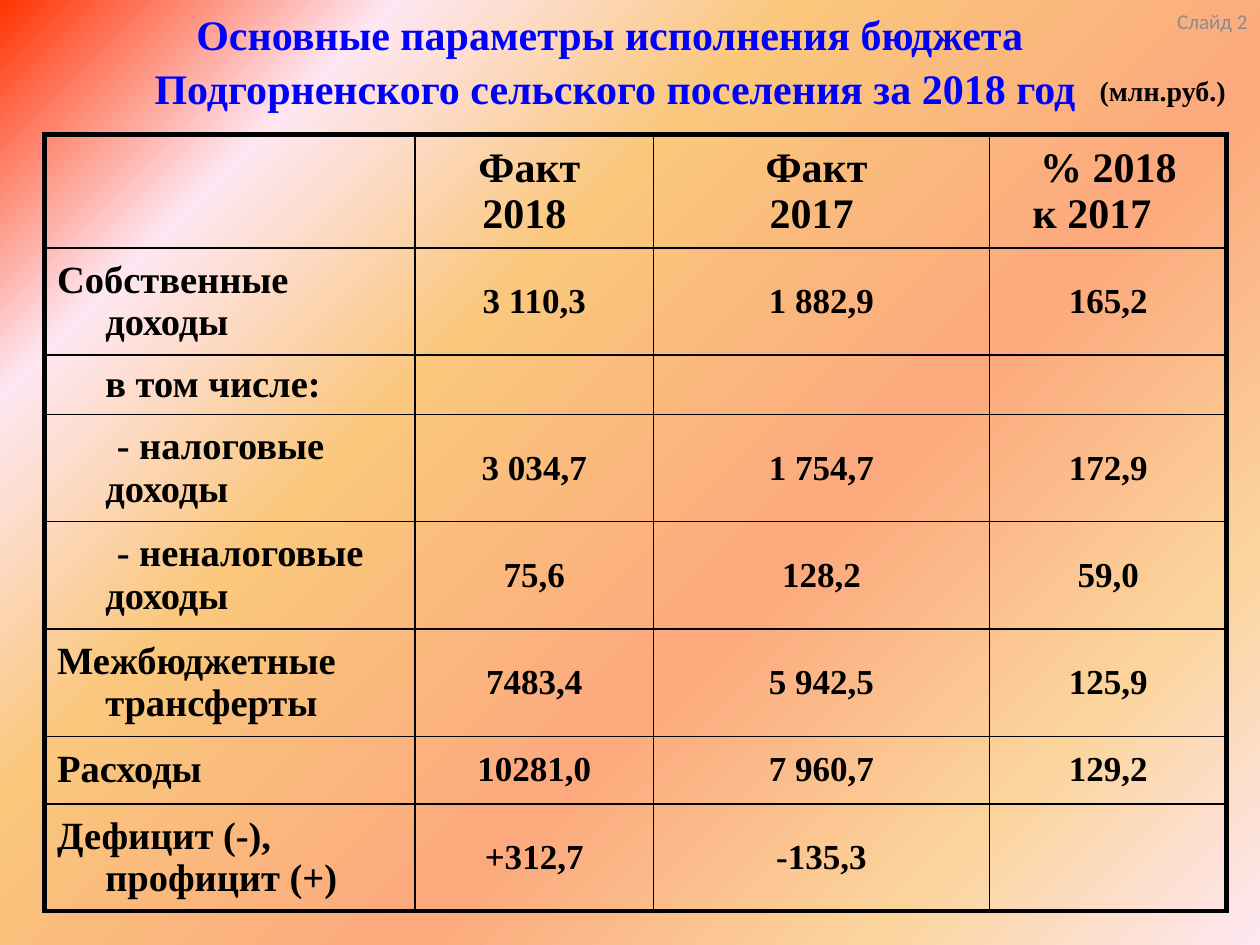
"""Build the slide with the budget execution table."""
from lxml import etree
from pptx import Presentation
from pptx.dml.color import RGBColor
from pptx.enum.text import MSO_ANCHOR, PP_ALIGN
from pptx.oxml.ns import qn
from pptx.util import Cm, Pt

LEFT, CENTER, RIGHT = PP_ALIGN.LEFT, PP_ALIGN.CENTER, PP_ALIGN.RIGHT
MIDDLE = MSO_ANCHOR.MIDDLE
BLUE = RGBColor(0x00, 0x00, 0xFF)
BLACK = RGBColor(0x00, 0x00, 0x00)
GRAY = RGBColor(0x8C, 0x8C, 0x8C)
SERIF = "Times New Roman"
STOPS = [
    (0, RGBColor(0xFF, 0x33, 0x00)),
    (18, RGBColor(0xFE, 0xE7, 0xF2)),
    (36, RGBColor(0xFA, 0xC7, 0x7D)),
    (61, RGBColor(0xFB, 0xA9, 0x7D)),
    (82, RGBColor(0xFB, 0xD4, 0x9C)),
    (100, RGBColor(0xFE, 0xE7, 0xF2)),
]


def style(p, text, size, align, color=BLACK, name=SERIF, bold=True):
    p.text = text
    p.alignment = align
    p.font.size = Pt(size)
    p.font.name = name
    p.font.bold = bold
    p.font.color.rgb = color


def border(cell, side, width):
    ln = etree.SubElement(cell._tc.get_or_add_tcPr(), qn(f"a:ln{side}"), w=str(Pt(width)))
    fill = etree.SubElement(ln, qn("a:solidFill"))
    etree.SubElement(fill, qn("a:srgbClr"), val=str(BLACK))


prs = Presentation()
prs.slide_width, prs.slide_height = Cm(25.4), Cm(19.05)
s = prs.slides.add_slide(prs.slide_layouts[6])

bg = s.background.fill
bg.gradient()
bg.gradient_angle = 315
stop_list = s.element.find(f".//{qn('a:gsLst')}")
stop_list.clear()
for pos, color in STOPS:
    gs = etree.SubElement(stop_list, qn("a:gs"), pos=str(pos * 1000))
    etree.SubElement(gs, qn("a:srgbClr"), val=str(color))

title = "Основные параметры исполнения бюджета \vПодгорненского сельского поселения за 2018 год"
boxes = [
    ((0, 0, 24.8, 2.4), 0.13, 1.07, (title, 24, CENTER, BLUE)),
    ((23.3, 0, 2.1, 1.32), 0.6, 1, ("Слайд 2", 12, RIGHT, GRAY, "Calibri", False)),
    ((21.89, 1.32, 3.1, 1), 0.13, 1, ("(млн.руб.)", 16, CENTER)),
]
for place, bottom, spacing, text in boxes:
    tf = s.shapes.add_textbox(*map(Cm, place)).text_frame
    tf.word_wrap = True
    tf.vertical_anchor = MIDDLE
    tf.margin_bottom = Cm(bottom)
    p = tf.paragraphs[0]
    p.line_spacing = spacing
    style(p, *text)

headers = [
    ("", 0),
    ("Факт\n2018", 0.2),
    ("Факт\n2017", 0.2),
    ("% 2018\nк 2017", 0.66),
]
HANG, FLUSH, DASH = -0.97, 0, 0.23
rows = [
    (2.16, HANG, "Собственные доходы", "3 110,3", "1 882,9", "165,2"),
    (1.2, FLUSH, "в том числе:", "", "", ""),
    (2.16, DASH, "- налоговые доходы", "3 034,7", "1 754,7", "172,9"),
    (2.16, DASH, "- неналоговые доходы", "75,6", "128,2", "59,0"),
    (2.16, HANG, "Межбюджетные трансферты", "7483,4", "5 942,5", "125,9"),
    (1.37, HANG, "Расходы", "10281,0", "7 960,7", "129,2"),
    (2.16, HANG, "Дефицит (-), профицит (+)", "+312,7", "-135,3", ""),
]
widths = [7.47, 4.8, 6.78, 4.78]
heights = [2.11] + [row[0] for row in rows]
last_row, last_col = len(rows), len(widths) - 1
thin_below = {3, 5}

table = s.shapes.add_table(len(heights), len(widths), Cm(0.9), Cm(2.71),
                           Cm(sum(widths)), Cm(sum(heights))).table
table.first_row = table.horz_banding = False
for column, width in zip(table.columns, widths):
    column.width = Cm(width)
for row, height in zip(table.rows, heights):
    row.height = Cm(height)

for c, (text, indent) in enumerate(headers):
    if text:
        cell = table.cell(0, c)
        cell.margin_right = Cm(0.25 + 2 * indent if indent < 0.5 else 0.25 + indent)
        tf = cell.text_frame
        tf.text = text
        for p in tf.paragraphs:
            style(p, p.text, 24, CENTER)
        tf.paragraphs[0]._p.get_or_add_pPr().set("indent", str(Cm(indent)))

for r, (_, indent, label, *values) in enumerate(rows, 1):
    p = table.cell(r, 0).text_frame.paragraphs[0]
    style(p, label, 22, LEFT)
    pPr = p._p.get_or_add_pPr()
    pPr.set("marL", str(Cm(0.97)))
    pPr.set("indent", str(Cm(indent)))
    for c, value in enumerate(values, 1):
        if value:
            style(table.cell(r, c).text_frame.paragraphs[0], value, 20, CENTER)

for r in range(last_row + 1):
    for c in range(last_col + 1):
        cell = table.cell(r, c)
        cell.vertical_anchor = MIDDLE
        border(cell, "L", 3 if c == 0 else 1)
        border(cell, "R", 3 if c == last_col else 1)
        border(cell, "T", 3 if r == 0 else 0.5 if r - 1 in thin_below else 1)
        border(cell, "B", 3 if r == last_row else 0.5 if r in thin_below else 1)
        cell.fill.background()

prs.save("out.pptx")
